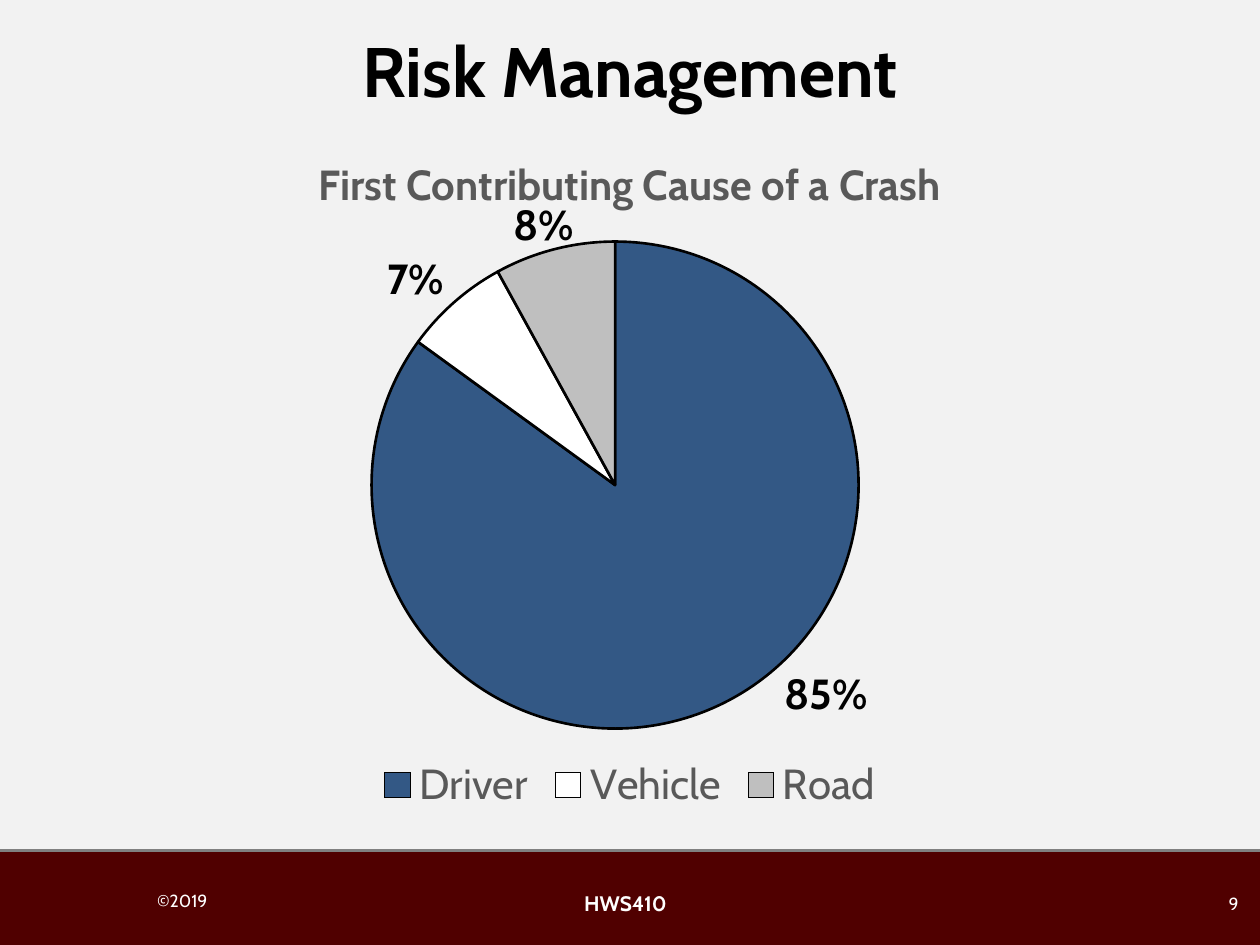
from typing import NamedTuple

from lxml import etree
from pptx import Presentation
from pptx.chart.data import CategoryChartData
from pptx.dml.color import RGBColor
from pptx.enum import chart as charts, shapes, text
from pptx.oxml import parse_xml
from pptx.oxml.ns import nsdecls, qn
from pptx.util import Cm, Pt

FONT = "Cabin"
BLACK = RGBColor(0x00, 0x00, 0x00)
WHITE = RGBColor(0xFF, 0xFF, 0xFF)
MAROON = RGBColor(0x50, 0x00, 0x00)
PAPER = RGBColor(0xF2, 0xF2, 0xF2)
GREY = RGBColor(0x80, 0x80, 0x80)
DARK_GREY = RGBColor(0x59, 0x59, 0x59)
BLUE = RGBColor(0x33, 0x58, 0x85)
SILVER = RGBColor(0xBF, 0xBF, 0xBF)

LEFT, CENTER, RIGHT = text.PP_ALIGN.LEFT, text.PP_ALIGN.CENTER, text.PP_ALIGN.RIGHT
TOP, MIDDLE = text.MSO_ANCHOR.TOP, text.MSO_ANCHOR.MIDDLE

# Centimetres
WIDTH, HEIGHT, FOOTER_TOP = 25.4, 19.05, 17.15
CHART_WIDTH, CHART_HEIGHT = 20.32, 13.97
PIE_DIAMETER = 9.82


class Label(NamedTuple):
    """A line of text; lengths in centimetres, size in points."""
    words: str
    left: float
    top: float
    width: float
    height: float
    size: int
    color: RGBColor
    bold: bool = False
    align: text.PP_ALIGN = CENTER
    anchor: text.MSO_ANCHOR = TOP


class Cause(NamedTuple):
    name: str
    percent: int
    color: RGBColor
    label_left: float
    label_top: float


CAUSES = [
    Cause("Driver", 85, BLUE, 13.77, 13.34),
    Cause("Vehicle", 7, WHITE, 5.5, 4.97),
    Cause("Road", 8, SILVER, 8.08, 3.87),
]

FOOTER = [
    Label("9", 19.3, 17.7, 5.92, 1.02, 10, WHITE, align=RIGHT, anchor=MIDDLE),
    Label("HWS410", 10.49, 17.83, 4.24, 0.76, 12, WHITE, bold=True),
    Label("©2019", 2.92, 17.64, 1.85, 1.02, 10, WHITE, align=LEFT, anchor=MIDDLE),
]


def set_font(font, size: int, color: RGBColor, bold: bool) -> None:
    font.name, font.size, font.bold = FONT, Pt(size), bold
    font.color.rgb = color


def fill_label(box, label: Label) -> None:
    box.left, box.top = Cm(label.left), Cm(label.top)
    box.width, box.height = Cm(label.width), Cm(label.height)
    frame = box.text_frame
    frame.text = label.words
    frame.word_wrap = True
    frame.auto_size = text.MSO_AUTO_SIZE.NONE
    frame.vertical_anchor = label.anchor
    para = frame.paragraphs[0]
    para.alignment = label.align
    set_font(para.font, label.size, label.color, label.bold)


def add_label(page, label: Label) -> None:
    fill_label(page.shapes.add_textbox(0, 0, 0, 0), label)


def place_in_chart(parent, index: int, left: float, top: float,
                   diameter: float = 0) -> None:
    """Give a chart part a fixed place, in centimetres from the chart's corner."""
    settings = {"layoutTarget": "inner"} if diameter else {}
    settings |= {"xMode": "edge", "yMode": "edge",
                 "x": left / CHART_WIDTH, "y": top / CHART_HEIGHT}
    if diameter:
        settings |= {"w": diameter / CHART_WIDTH, "h": diameter / CHART_HEIGHT}
    parts = "".join(f'<c:{key} val="{value}"/>' for key, value in settings.items())
    for old in parent.findall(qn("c:layout")):
        parent.remove(old)
    parent.insert(index, parse_xml(f'<c:layout {nsdecls("c")}><c:manualLayout>{parts}'
                                   "</c:manualLayout></c:layout>"))


def add_footer(page) -> None:
    band = page.shapes.add_shape(shapes.MSO_SHAPE.RECTANGLE, 0, Cm(FOOTER_TOP),
                                 Cm(WIDTH), Cm(HEIGHT - FOOTER_TOP))
    band.shadow.inherit = False
    band.fill.solid()
    band.fill.fore_color.rgb = MAROON
    band.line.fill.background()
    rule = page.shapes.add_connector(shapes.MSO_CONNECTOR.STRAIGHT, 0, Cm(FOOTER_TOP),
                                     Cm(WIDTH), Cm(FOOTER_TOP))
    rule.line.color.rgb = GREY
    rule.line.width = Pt(2)
    etree.SubElement(rule.element.spPr, qn("a:effectLst"))
    for label in FOOTER:
        add_label(page, label)


def add_cause_pie(page) -> None:
    data = CategoryChartData()
    data.categories = [cause.name for cause in CAUSES]
    data.add_series("Series 1", [cause.percent for cause in CAUSES])
    pie = page.shapes.add_chart(charts.XL_CHART_TYPE.PIE, Cm(2.54), Cm(2.54),
                                Cm(CHART_WIDTH), Cm(CHART_HEIGHT), data).chart
    pie.font.name, pie.font.size = "Calibri", Pt(10)

    # Heading and legend
    pie.has_title = True
    heading = pie.chart_title
    heading.text_frame.text = "First Contributing Cause of a Crash"
    set_font(heading.text_frame.paragraphs[0].font, 24, DARK_GREY, True)
    place_in_chart(heading._element, 1, 3.72, 0.42)
    pie.has_legend = True
    pie.legend.position = charts.XL_LEGEND_POSITION.BOTTOM
    pie.legend.include_in_layout = False
    set_font(pie.legend.font, 24, DARK_GREY, False)

    # Slices
    plot = pie.plots[0]
    plot.vary_by_categories = True
    for index, cause in enumerate(CAUSES):
        style = plot.series[0].points[index].format
        style.fill.solid()
        style.fill.fore_color.rgb = cause.color
        style.line.color.rgb = BLACK
        style.line.width = Pt(1.5)
    place_in_chart(plot._element.getparent(), 0, 4.95, 2.33, PIE_DIAMETER)

    # Percentages around the pie
    for cause in CAUSES:
        add_label(page, Label(f"{cause.percent}%", cause.label_left, cause.label_top,
                              5.77, 1.45, 24, BLACK, bold=True))


def main() -> None:
    deck = Presentation()
    deck.slide_width, deck.slide_height = Cm(WIDTH), Cm(HEIGHT)
    page = deck.slides.add_slide(deck.slide_layouts[5])
    page.background.fill.solid()
    page.background.fill.fore_color.rgb = PAPER
    add_footer(page)
    fill_label(page.shapes.title, Label("Risk Management", 1.27, 0.43, 22.86, 3.18,
                                        40, BLACK, bold=True))
    add_cause_pie(page)
    deck.save("out.pptx")


if __name__ == "__main__":
    main()
